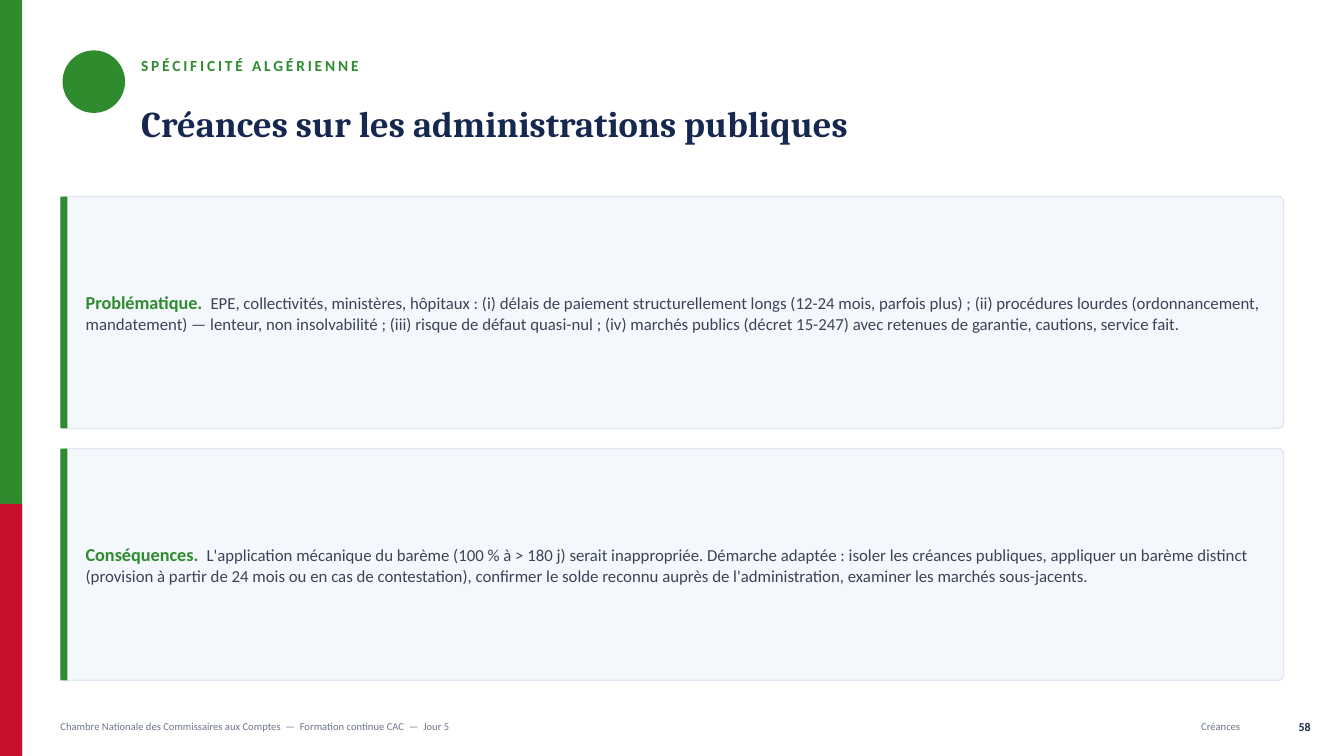
from pptx import Presentation
from pptx.dml.color import RGBColor
from pptx.enum.shapes import MSO_SHAPE
from pptx.enum.text import MSO_ANCHOR, PP_ALIGN
from pptx.util import Inches, Pt

RECT, ROUND, OVAL = MSO_SHAPE.RECTANGLE, MSO_SHAPE.ROUNDED_RECTANGLE, MSO_SHAPE.OVAL
MIDDLE = MSO_ANCHOR.MIDDLE
LEFT, RIGHT = PP_ALIGN.LEFT, PP_ALIGN.RIGHT

GREEN = RGBColor(0x2E, 0x8B, 0x2E)
RED = RGBColor(0xC8, 0x10, 0x2E)
NAVY = RGBColor(0x16, 0x28, 0x4F)
SLATE = RGBColor(0x3A, 0x44, 0x58)
GREY = RGBColor(0x6B, 0x76, 0x89)
PALE = RGBColor(0xF4, 0xF7, 0xFB)
EDGE = RGBColor(0xE2, 0xE9, 0xF2)

CARDS = [
    ("Problématique.  ",
     "EPE, collectivités, ministères, hôpitaux : (i) délais de paiement structurellement longs "
     "(12-24 mois, parfois plus) ; (ii) procédures lourdes (ordonnancement, mandatement) — lenteur, "
     "non insolvabilité ; (iii) risque de défaut quasi-nul ; (iv) marchés publics (décret 15-247) "
     "avec retenues de garantie, cautions, service fait."),
    ("Conséquences.  ",
     "L'application mécanique du barème (100 % à > 180 j) serait inappropriée. Démarche adaptée : "
     "isoler les créances publiques, appliquer un barème distinct (provision à partir de 24 mois ou "
     "en cas de contestation), confirmer le solde reconnu auprès de l'administration, examiner les "
     "marchés sous-jacents."),
]


class Page:
    """Draws the elements of one slide in a shared style."""

    def __init__(self, slide, font="Calibri"):
        self.slide = slide
        self.font = font

    def shape(self, kind, x, y, w, h, fill, edge=None):
        item = self.slide.shapes.add_shape(kind, Inches(x), Inches(y), Inches(w), Inches(h))
        item.shadow.inherit = False
        item.fill.solid()
        item.fill.fore_color.rgb = fill
        if edge is None:
            item.line.fill.background()
        else:
            item.line.color.rgb = edge
            item.line.width = Pt(1)
        return item

    def text(self, x, y, w, h, *parts, align=LEFT, font=None, space=None, track=None):
        box = self.slide.shapes.add_textbox(Inches(x), Inches(y), Inches(w), Inches(h))
        frame = box.text_frame
        frame.word_wrap = True
        frame.vertical_anchor = MIDDLE
        frame.margin_left = frame.margin_right = frame.margin_top = frame.margin_bottom = 0
        para = frame.paragraphs[0]
        para.alignment = align
        para.line_spacing = space
        for words, size, color, bold in parts:
            run = para.add_run()
            run.text = words
            run.font.name = font or self.font
            run.font.size = Pt(size)
            run.font.color.rgb = color
            run.font.bold = bold
            if track:
                run.font._element.set("spc", str(track * 100))

    def card(self, y, h, head, body):
        panel = self.shape(ROUND, 0.6, y, 12.13, h, PALE, EDGE)
        panel.adjustments[0] = 0.022
        self.shape(RECT, 0.6, y, 0.07, h, GREEN)
        self.text(0.85, y + 0.05, 11.7, h - 0.1, (head, 13, GREEN, True), (body, 12, SLATE, False))


def main():
    deck = Presentation()
    deck.slide_width, deck.slide_height = Inches(13.33), Inches(7.5)
    page = Page(deck.slides.add_slide(deck.slide_layouts[6]))

    page.shape(RECT, 0, 0, 0.22, 7.5, GREEN)
    page.shape(RECT, 0, 5, 0.22, 2.5, RED)
    page.shape(OVAL, 0.62, 0.5, 0.62, 0.62, GREEN)
    page.text(1.4, 0.5, 11, 0.3, ("SPÉCIFICITÉ ALGÉRIENNE", 11, GREEN, True), track=2)
    page.text(1.4, 0.82, 11.3, 0.85, ("Créances sur les administrations publiques", 26, NAVY, True),
              font="Cambria", space=0.95)

    for i, (head, body) in enumerate(CARDS):
        page.card(1.95 + 2.5 * i, 2.3, head, body)

    foot = "Chambre Nationale des Commissaires aux Comptes  —  Formation continue CAC  —  Jour 5"
    page.text(0.6, 7.06, 9.2, 0.3, (foot, 7.5, GREY, False))
    page.text(9.4, 7.06, 2.9, 0.3, ("Créances", 7.5, GREY, False), align=RIGHT)
    page.text(12.5, 7.06, 0.5, 0.3, ("58", 8.5, NAVY, True), align=RIGHT)
    deck.save("out.pptx")


if __name__ == "__main__":
    main()
